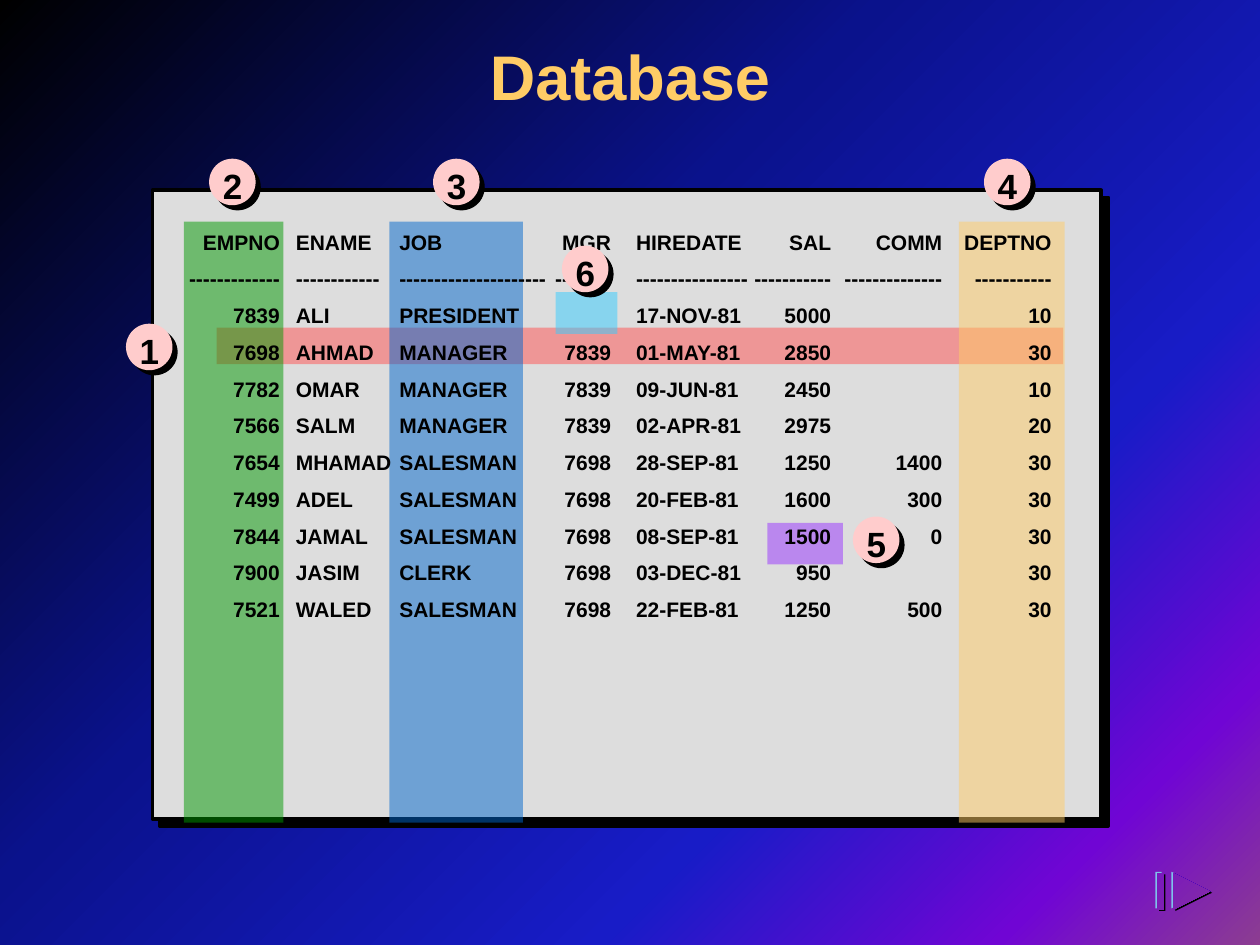
from lxml import etree
from pptx import Presentation
from pptx.dml.color import RGBColor
from pptx.enum.shapes import MSO_SHAPE
from pptx.enum.text import PP_ALIGN
from pptx.oxml import parse_xml
from pptx.oxml.ns import nsdecls, qn
from pptx.util import Pt

COLORS = {
    "ink": "000000", "panel": "DDDDDD", "title": "FFCC66", "badge": "FFCCCC",
    "row": "FF5050", "key": "009900", "job": "0066CC", "dept": "FFCC66",
    "salary": "9933FF", "manager": "33CCFF", "icon": "7FC1EB",
}
BACKGROUND = [(0, "000000"), (40, "0A128C"), (70, "181CC7"),
              (88, "7005D4"), (100, "8C3D91")]

# Tab stops of the listing: employee number to department number
TAB_STOPS = [(53.5, "r"), (62.6, "l"), (121.7, "l"), (242.8, "r"),
             (257, "l"), (368.5, "r"), (432, "r"), (494.5, "r")]
RULE_LENGTHS = [13, 12, 21, 8, 16, 11, 14, 11]
RECORDS = [
    ("EMPNO", "ENAME", "JOB", "MGR", "HIREDATE", "SAL", "COMM", "DEPTNO"),
    tuple("-" * length for length in RULE_LENGTHS),
    ("7839", "ALI", "PRESIDENT", "", "17-NOV-81", "5000", "", "10"),
    ("7698", "AHMAD", "MANAGER", "7839", "01-MAY-81", "2850", "", "30"),
    ("7782", "OMAR", "MANAGER", "7839", "09-JUN-81", "2450", "", "10"),
    ("7566", "SALM", "MANAGER", "7839", "02-APR-81", "2975", "", "20"),
    ("7654", "MHAMAD", "SALESMAN", "7698", "28-SEP-81", "1250", "1400", "30"),
    ("7499", "ADEL", "SALESMAN", "7698", "20-FEB-81", "1600", "300", "30"),
    ("7844", "JAMAL", "SALESMAN", "7698", "08-SEP-81", "1500", "0", "30"),
    ("7900", "JASIM", "CLERK", "7698", "03-DEC-81", "950", "", "30"),
    ("7521", "WALED", "SALESMAN", "7698", "22-FEB-81", "1250", "500", "30"),
]

# Number, colour, highlight box, badge corner
COLUMN_TOP, COLUMN_HEIGHT, HEADER_BADGE_TOP = 126.7, 343.4, 90.7
CALLOUTS = [
    ("1", "row", (123.8, 187.2, 483.8, 20.9), (72, 185)),
    ("2", "key", (105.1, COLUMN_TOP, 56.9, COLUMN_HEIGHT), (119.5, HEADER_BADGE_TOP)),
    ("3", "job", (222.5, COLUMN_TOP, 76.3, COLUMN_HEIGHT), (247.5, HEADER_BADGE_TOP)),
    ("4", "dept", (547.9, COLUMN_TOP, 60.5, COLUMN_HEIGHT), (562.3, HEADER_BADGE_TOP)),
    ("5", "salary", (438.5, 298.8, 43.2, 23.8), (487.4, 295.2)),
]
MANAGER_CALLOUT = ("6", "manager", (317.5, 167, 35.3, 23.8), (321.1, 140.4))


def write(paragraph, text, size=12, color="ink", align=PP_ALIGN.LEFT,
          before=0, spacing=1.0, tabs=()):
    paragraph.text = text
    paragraph.alignment = align
    paragraph.space_before = Pt(before)
    paragraph.line_spacing = spacing
    if tabs:
        tab_list = etree.SubElement(paragraph._p.get_or_add_pPr(), qn("a:tabLst"))
        for position, side in tabs:
            etree.SubElement(tab_list, qn("a:tab"), pos=str(Pt(position)), algn=side)
    font = paragraph.runs[0].font
    font.name, font.size, font.bold = "Arial", Pt(size), True
    font.color.rgb = RGBColor.from_string(COLORS[color])


def hard_shadow(distance, alpha=100):
    return parse_xml(
        f'<a:effectLst {nsdecls("a")}><a:outerShdw blurRad="0" dist="{Pt(distance)}" '
        f'dir="2700000" algn="ctr" rotWithShape="0"><a:srgbClr val="{COLORS["ink"]}">'
        f'<a:alpha val="{alpha * 1000}"/></a:srgbClr></a:outerShdw></a:effectLst>')


class DatabaseSlide:
    def __init__(self, slide):
        self.slide = slide

    def background(self):
        fill = self.slide.background.fill
        fill.gradient()
        fill.gradient_angle = 315
        stops = next(self.slide._element.iter(qn("a:gsLst")))
        for stop in list(stops):
            stops.remove(stop)
        for position, color in BACKGROUND:
            stop = etree.SubElement(stops, qn("a:gs"), pos=str(position * 1000))
            etree.SubElement(stop, qn("a:srgbClr"), val=color)

    def paint(self, shape, color, alpha=None, shadow=None, outline=None):
        """Fill a shape; without a colour it shows the slide background."""
        if color:
            shape.fill.solid()
            shape.fill.fore_color.rgb = RGBColor.from_string(COLORS[color])
        else:
            shape._element.set("useBgFill", "1")
        if alpha:
            tint = next(shape._element.spPr.iter(qn("a:srgbClr")))
            etree.SubElement(tint, qn("a:alpha"), val=str(alpha * 1000))
        if outline:
            shape.line.color.rgb = RGBColor.from_string(COLORS["ink"])
            shape.line.width = Pt(outline)
        else:
            shape.line.fill.background()
        if shadow:
            shape._element.spPr.append(hard_shadow(shadow))
        else:
            shape.shadow.inherit = False

    def block(self, box, color, parent=None, kind=MSO_SHAPE.RECTANGLE, **style):
        shapes = (parent or self.slide).shapes
        self.paint(shapes.add_shape(kind, *map(Pt, box)), color, **style)

    def triangle(self, left, top, width, height, color, parent):
        outline = parent.shapes.build_freeform(Pt(left + width), Pt(top + height / 2))
        outline.add_line_segments([(Pt(left), Pt(top)), (Pt(left), Pt(top + height))])
        self.paint(outline.convert_to_shape(), color)

    def text(self, box, lines, parent=None, wrap=False, gap=0, **style):
        frame = (parent or self.slide).shapes.add_textbox(*map(Pt, box)).text_frame
        frame.word_wrap = wrap
        for index, line in enumerate(lines):
            paragraph = frame.add_paragraph() if index else frame.paragraphs[0]
            write(paragraph, line, before=gap if index else 0, **style)
        return frame

    def callout(self, number, color, box, badge):
        group = self.slide.shapes.add_group_shape()
        left, top = badge
        self.block(box, color, group, alpha=50)
        self.block((left, top, 26.6, 26.6), "badge", group, MSO_SHAPE.OVAL, shadow=4.2)
        self.text((left + 0.4, top - 5, 26, 36), [number], group,
                  size=20, align=PP_ALIGN.CENTER, spacing=1.2)

    def next_icon(self, left, top):
        group = self.slide.shapes.add_group_shape()
        for color, dx, dy in (("ink", 2.2, 1.5), ("icon", 0, 0), (None, 1.1, 0.7)):
            self.block((left + dx, top + dy, 3.6, 20.9), color, group)
            self.triangle(left + dx + 9.2, top + dy, 21, 20.9, color, group)


def main():
    deck = Presentation()
    deck.slide_width, deck.slide_height = Pt(720), Pt(540)
    page = DatabaseSlide(deck.slides.add_slide(deck.slide_layouts[6]))
    page.background()

    # Panel and title
    page.block((87.1, 108.7, 542.2, 359.3), "panel", shadow=5.7, outline=2)
    title = page.text((25.9, 18, 668.2, 91.4), ["Database"], wrap=True,
                      size=36, color="title", align=PP_ALIGN.CENTER)
    title_format = title.paragraphs[0].runs[0]._r.get_or_add_rPr()
    title_format.find(qn("a:solidFill")).addnext(hard_shadow(3))

    # Highlights behind the listing
    for callout in CALLOUTS:
        page.callout(*callout)

    # Employee listing
    page.text((99.4, 127.4, 516.2, 239.8),
              ["\t" + "\t".join(record).rstrip() for record in RECORDS],
              gap=6.6, tabs=TAB_STOPS)

    # Empty manager field and the next-page icon
    page.callout(*MANAGER_CALLOUT)
    page.next_icon(660.2, 498.2)
    deck.save("out.pptx")


if __name__ == "__main__":
    main()
